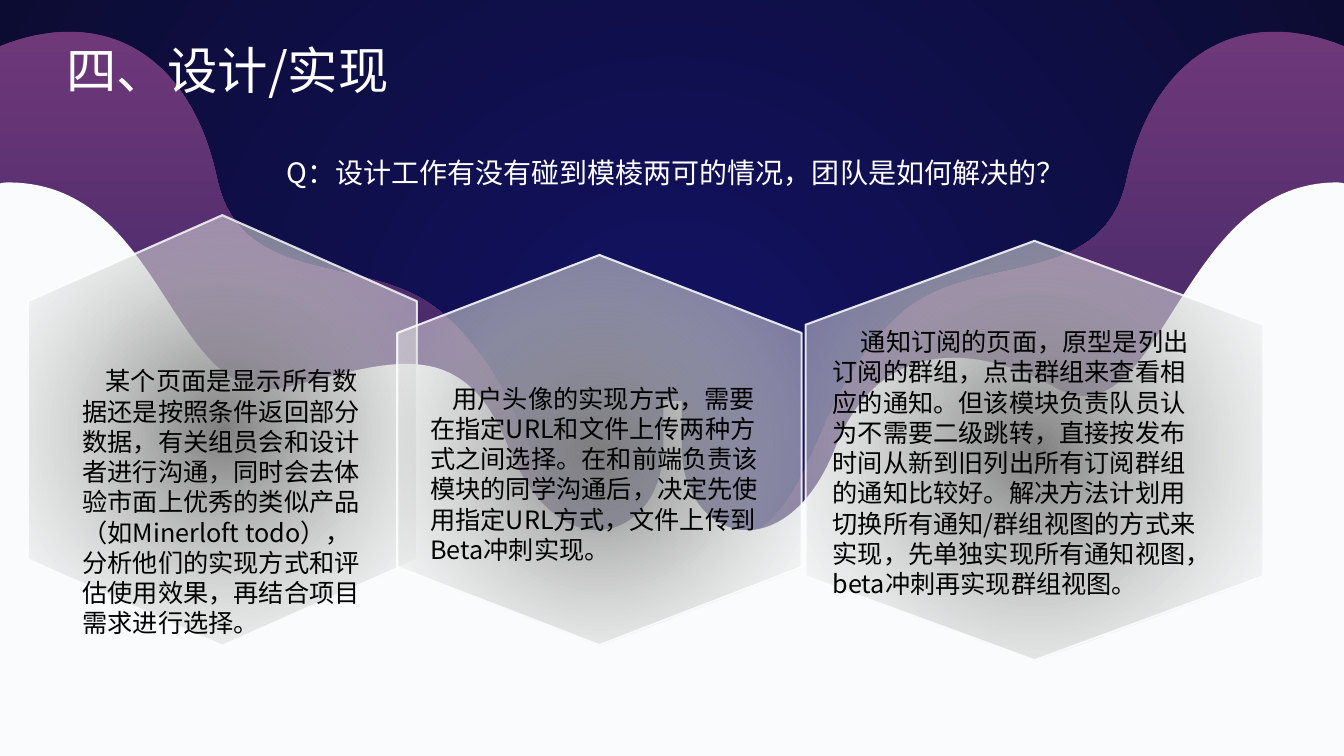
from lxml import etree
from pptx import Presentation, util as u
from pptx.dml.color import RGBColor
from pptx.enum import shapes, text
from pptx.oxml import ns

FONT = "Noto Sans CJK SC"
COLORS = {"blue": "131263", "navy": "0C0C33", "plum": "72397B", "violet": "3F2767",
          "deep": "0B1453", "snow": "F9FBFC", "gray": "808080",
          "white": "FFFFFF", "black": "000000"}
WIDE, HIGH = 13.33, 7.5

# Each step is a line end (x, y) or a curve (two controls and an end).
PURPLE = [
    (WIDE, 0.46),
    (12.26, 0.03, 11.43, 0.59, 11.18, 1.76), (10.95, 2.91, 9.63, 2.48, 8.93, 3.12),
    (7.82, 4.12, 8.24, 5.49, 6.67, 5.49), (5.1, 5.49, 5.52, 4.12, 4.4, 3.12),
    (3.7, 2.48, 2.39, 2.91, 2.15, 1.76), (1.9, 0.59, 1.07, 0.03, 0, 0.46),
    (0, HIGH), (WIDE, HIGH)]
PALE = [
    (0.08, 1.81), (0.05, 1.81, 0.03, 1.81, 0, 1.82),
    (0, HIGH), (WIDE, HIGH), (WIDE, 1.82),
    (13.31, 1.81, 13.28, 1.81, 13.26, 1.81), (11.82, 1.81, 11.57, 3.93, 10.75, 3.93),
    (10.66, 3.93, 10.55, 3.9, 10.44, 3.83), (10.14, 3.67, 9.8, 3.55, 9.46, 3.55),
    (9, 3.55, 8.55, 3.78, 8.29, 4.43), (8.06, 5.02, 7.71, 5.26, 7.41, 5.26),
    (7.06, 5.26, 6.76, 4.93, 6.76, 4.43), (6.76, 3.98), (6.58, 3.98), (6.58, 4.43),
    (6.58, 4.93, 6.28, 5.26, 5.92, 5.26), (5.62, 5.26, 5.28, 5.02, 5.04, 4.43),
    (4.79, 3.8, 4.45, 3.61, 4.03, 3.61), (3.71, 3.61, 3.33, 3.72, 2.9, 3.83),
    (2.82, 3.85, 2.75, 3.86, 2.68, 3.86), (1.67, 3.86, 1.58, 1.81, 0.08, 1.81)]

# Hexagon box (before its quarter turn), text box, first-line indent, words.
CARDS = [
    ((0.07, 2.34, 4.27, 3.86), (0.72, 3.58, 3, 2.83), 0.23,
     "某个页面是显示所有数据还是按照条件返回部分数据，有关组员会和设计者进行沟通，"
     "同时会去体验市面上优秀的类似产品（如Minerloft todo），"
     "分析他们的实现方式和评估使用效果，再结合项目需求进行选择。"),
    ((4.01, 2.46, 3.87, 4.01), (4.17, 3.75, 3.52, 1.92), 0.22,
     "用户头像的实现方式，需要在指定URL和文件上传两种方式之间选择。"
     "在和前端负责该模块的同学沟通后，决定先使用指定URL方式，文件上传到Beta冲刺实现。"),
    ((8.18, 2.2, 4.16, 4.54), (8.16, 3.19, 3.92, 2.83), 0.28,
     "通知订阅的页面，原型是列出订阅的群组，点击群组来查看相应的通知。"
     "但该模块负责队员认为不需要二级跳转，直接按发布时间从新到旧列出所有订阅群组的通知比较好。"
     "解决方法计划用切换所有通知/群组视图的方式来实现，"
     "先单独实现所有通知视图，beta冲刺再实现群组视图。")]


def color(name):
    return RGBColor.from_string(COLORS[name])


def inches(box):
    return [u.Inches(n) for n in box]


def add(parent, tag, **attrs):
    node = etree.SubElement(parent, ns.qn(tag))
    for key, value in attrs.items():
        node.set(key, str(value))
    return node


def shade(shape, stops, round_=False):
    """Fill with (percent, colour, opacity) stops, from the centre or downwards."""
    shape.fill.gradient()
    grad = shape.element.spPr.find(ns.qn("a:gradFill"))
    for child in list(grad):
        grad.remove(child)
    row = add(grad, "a:gsLst")
    for place, name, alpha in stops:
        stop = add(row, "a:gs", pos=place * 1000)
        tint = add(stop, "a:srgbClr", val=COLORS[name])
        if alpha < 100:
            add(tint, "a:alpha", val=alpha * 1000)
    if round_:
        way = add(grad, "a:path", path="circle")
        add(way, "a:fillToRect", l=50000, t=50000, r=50000, b=50000)
    else:
        add(grad, "a:lin", ang=5400000, scaled=0)


def wave(slide, steps):
    """Draw all points as lines, then join each curve's three into one Bézier."""
    points = [inches(step[i:i + 2]) for step in steps for i in range(0, len(step), 2)]
    pen = slide.shapes.build_freeform(*points[0], scale=1.0)
    pen.add_line_segments(points[1:], close=True)
    shape = pen.convert_to_shape()
    lines = iter(list(shape.element.spPr.iter(ns.qn("a:lnTo"))))
    for step in steps[1:]:
        first = next(lines)
        if len(step) == 6:
            first.tag = ns.qn("a:cubicBezTo")
            for _ in range(2):
                line = next(lines)
                first.append(line[0])
                line.getparent().remove(line)
    shape.shadow.inherit = False
    shape.line.fill.background()
    return shape


def night(slide):
    sky = slide.shapes.add_shape(shapes.MSO_SHAPE.RECTANGLE,
                                 *inches((0, 0, WIDE, HIGH)))
    sky.shadow.inherit = False
    sky.line.fill.background()
    shade(sky, [(0, "blue", 100), (100, "navy", 100)], round_=True)


def hexagon(slide, box):
    shape = slide.shapes.add_shape(shapes.MSO_SHAPE.FLOWCHART_PREPARATION, *inches(box))
    shape.rotation = 90
    shape.shadow.inherit = False
    shade(shape, [(0, "gray", 100), (100, "white", 39)], round_=True)
    shape.line.width = u.Pt(1.5)
    shape.line.color.rgb = color("white")
    tint = shape.element.spPr.find(ns.qn("a:ln")).find(".//" + ns.qn("a:srgbClr"))
    add(tint, "a:alpha", val=82000)


def label(slide, box, words, size, name, indent=0):
    frame = slide.shapes.add_textbox(*inches(box)).text_frame
    frame.word_wrap = True
    frame.auto_size = text.MSO_AUTO_SIZE.SHAPE_TO_FIT_TEXT
    para = frame.paragraphs[0]
    if indent:
        props = para._p.get_or_add_pPr()
        props.set("marL", "0")
        props.set("indent", str(u.Inches(indent)))
    run = para.add_run()
    run.text = words
    run.font.size = u.Pt(size)
    run.font.name = FONT
    run.font.color.rgb = color(name)
    add(run.font._element, "a:ea", typeface=FONT)


def main():
    deck = Presentation()
    deck.slide_width, deck.slide_height = inches((WIDE, HIGH))
    slide = deck.slides.add_slide(deck.slide_layouts[6])
    night(slide)
    shade(wave(slide, PURPLE), [(0, "plum", 100), (56, "violet", 100), (100, "deep", 100)])
    pale = wave(slide, PALE)
    pale.fill.solid()
    pale.fill.fore_color.rgb = color("snow")
    label(slide, (0.56, 0.34, 3.75, 0.71), "四、设计/实现", 36, "white")
    for box, *_ in CARDS:
        hexagon(slide, box)
    for _, box, indent, words in CARDS:
        label(slide, box, words, 18, "black", indent)
    label(slide, (2.74, 1.49, 7.85, 0.44),
          "Q：设计工作有没有碰到模棱两可的情况，团队是如何解决的？", 20, "white")
    deck.save("out.pptx")


if __name__ == "__main__":
    main()
